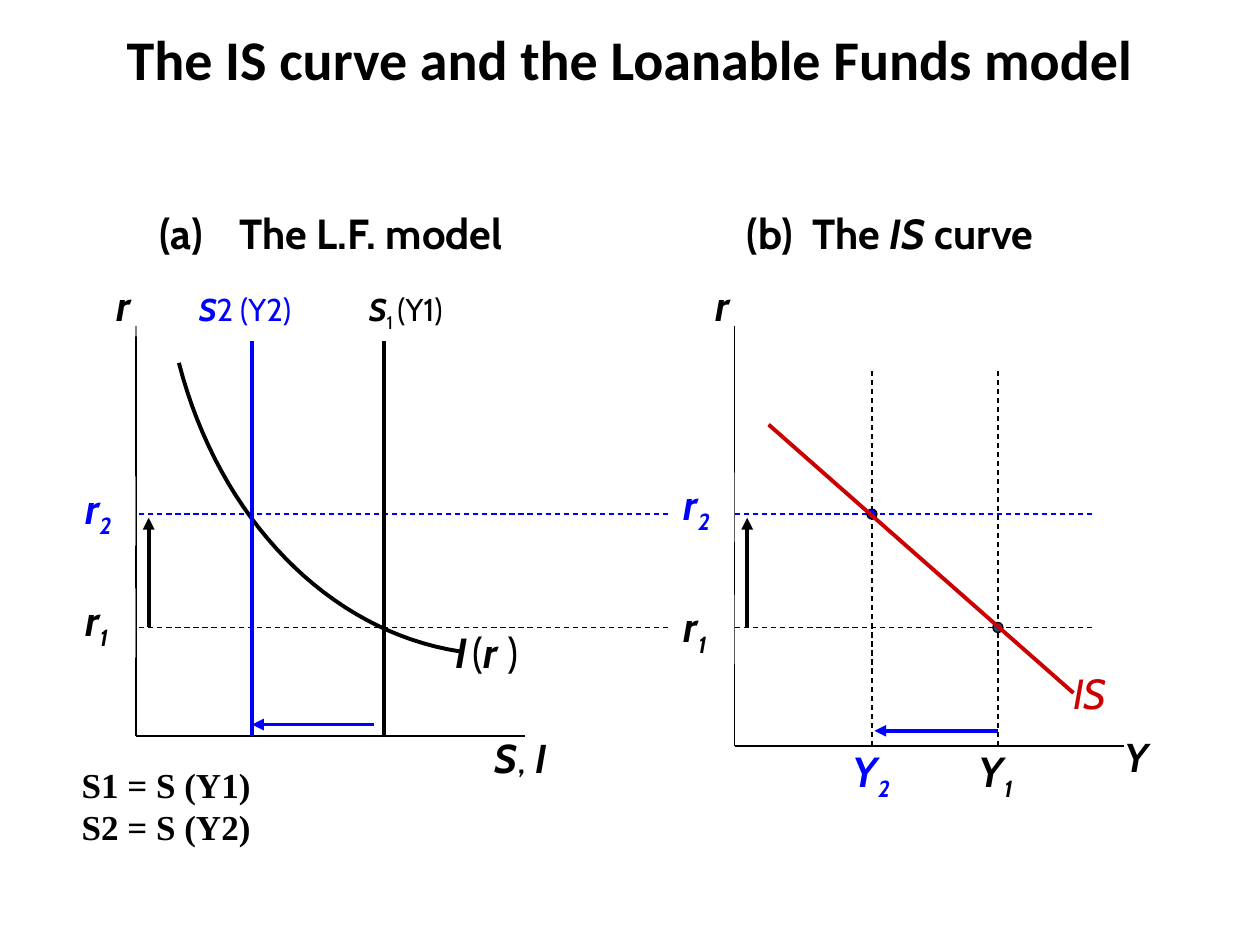
from typing import NamedTuple

from lxml.etree import SubElement
from pptx import Presentation
from pptx.dml.color import RGBColor as RGB
from pptx.enum.dml import MSO_LINE as Dash
from pptx.enum.shapes import MSO_CONNECTOR as Connector, MSO_SHAPE as Shape
from pptx.enum.text import MSO_ANCHOR as Anchor, MSO_AUTO_SIZE as AutoSize, PP_ALIGN as Align
from pptx.oxml.ns import qn
from pptx.util import Pt

PX = 9144  # EMU in one px, 100 px to the inch


class Theme:
    black, blue, red = RGB(0, 0, 0), RGB(0, 0, 255), RGB(204, 0, 0)
    white, navy = RGB(255, 255, 255), RGB(31, 73, 125)
    heading_font, label_font, note_font = "Calibri", "Cabin", "Times New Roman"
    heading, label, minor, note, tag, gap = 32, 24, 23, 20, 18, 12
    thin, axis, thick = 0.75, 1, 2.25


class Box(NamedTuple):
    x: int
    y: int
    w: int
    h: int

    def inner(self, dx, dy, w, h):
        return Box(self.x + dx, self.y + dy, w, h)


BOLD = {"bold": True}
ITALIC = {"italic": True}
SYMBOL = BOLD | ITALIC
MINOR = SYMBOL | {"size": Pt(Theme.minor)}
GAP = SYMBOL | {"size": Pt(Theme.gap)}
INDEX_INSETS = (10, 5, 10, 10)
RATE_INSETS = (10, 5, 0, 10)
R1, R2 = 498, 408  # heights of the two interest rates, shared by both diagrams


def emu(*lengths):
    return [round(length * PX) for length in lengths]


def write(paragraph, runs, color, font, size):
    """Add runs given as (text, font values[, baseline percent])."""
    for text, values, *baseline in runs:
        run = paragraph.add_run()
        run.text = text
        run.font.color.rgb = color
        for name, value in ({"name": font, "size": Pt(size)} | values).items():
            setattr(run.font, name, value)
        if baseline:
            run._r.get_or_add_rPr().set("baseline", str(baseline[0] * 1000))


def label(slide, box, *lines, color=Theme.black, font=Theme.label_font, size=Theme.label,
          insets=(10, 5, 10, 5), hanging=0, veil=0):
    """Place text; veil is the opacity in percent of a white ground."""
    holder = slide.shapes.add_textbox(*emu(*box))
    frame = holder.text_frame
    frame.word_wrap, frame.auto_size = True, AutoSize.SHAPE_TO_FIT_TEXT
    for side, inset in zip(("left", "top", "right", "bottom"), emu(*insets)):
        setattr(frame, f"margin_{side}", inset)
    for index, runs in enumerate(lines):
        paragraph = frame.add_paragraph() if index else frame.paragraphs[0]
        write(paragraph, runs, color, font, size)
        if hanging:
            properties = paragraph._p.get_or_add_pPr()
            properties.set("marL", str(hanging * PX))
            properties.set("indent", str(-hanging * PX))
    if veil:
        holder.fill.solid()
        holder.fill.fore_color.rgb = Theme.white
        if veil < 100:
            tint = holder._element.spPr.find(f".//{qn('a:srgbClr')}")
            SubElement(tint, qn("a:alpha"), val=str(veil * 1000))


def line(slide, start, end, color=Theme.black, width=Theme.thick, dashed=False, arrow=False):
    stroke = slide.shapes.add_connector(Connector.STRAIGHT, *emu(*start, *end))
    stroke.line.color.rgb, stroke.line.width = color, Pt(width)
    if dashed:
        stroke.line.dash_style = Dash.DASH
    if arrow:
        SubElement(stroke._element.spPr.find(qn("a:ln")), qn("a:tailEnd"), type="triangle")
    SubElement(stroke._element.spPr, qn("a:effectLst"))


def dot(slide, x, y, color):
    point = slide.shapes.add_shape(Shape.OVAL, *emu(x - 4, y - 4, 8, 8))
    point.shadow.inherit = False
    point.fill.solid()
    point.fill.fore_color.rgb = color
    point.line.color.rgb, point.line.width = Theme.black, Pt(Theme.thin)


def curve(slide, controls, steps=32):
    """Draw a cubic Bezier curve through its four control points."""
    weights = [((1 - t) ** 3, 3 * t * (1 - t) ** 2, 3 * t * t * (1 - t), t ** 3)
               for t in (step / steps for step in range(steps + 1))]
    points = [tuple(round(sum(w * c for w, c in zip(weight, axis)) * PX) for axis in zip(*controls))
              for weight in weights]
    builder = slide.shapes.build_freeform(*points[0])
    builder.add_line_segments(points[1:], close=False)
    outline = builder.convert_to_shape()
    outline.shadow.inherit = False
    outline.fill.background()
    outline.line.color.rgb, outline.line.width = Theme.black, Pt(Theme.thick)


def heading(slide, box):
    title = slide.shapes.title
    for side, value in zip(("left", "top", "width", "height"), emu(*box)):
        setattr(title, side, value)
    title.text_frame.vertical_anchor = Anchor.MIDDLE
    paragraph = title.text_frame.paragraphs[0]
    paragraph.alignment = Align.CENTER
    write(paragraph, [("The IS curve and the Loanable Funds model", BOLD)],
          Theme.black, Theme.heading_font, Theme.heading)


def rate_guides(slide, left, right):
    for rate, color in ((R1, Theme.black), (R2, Theme.blue)):
        line(slide, (right, rate), (left, rate), color, Theme.thin, dashed=True)


def rate_axes(slide, box, rate_tops, name_veil, rate_veil):
    """Draw both axes, the r labels and the arrow for the rise from r1 to r2."""
    corner = (box.x, box.y + box.h)
    line(slide, (box.x, box.y), corner, width=Theme.axis)
    line(slide, corner, (box.x + box.w, corner[1]), width=Theme.axis)
    label(slide, box.inner(-25, -42, 50, 50), [("r", SYMBOL)], veil=name_veil)
    for index, top, color in zip("12", rate_tops, (Theme.black, Theme.blue)):
        label(slide, box.inner(-50, top, 50, 55), [("r", SYMBOL), (index, MINOR, -25)],
              color=color, insets=RATE_INSETS, veil=rate_veil)
    line(slide, (box.x + 10, R1), (box.x + 10, R2 + 3), arrow=True)


def loanable_funds(slide, box):
    s2, s1, bottom = box.x + 92, box.x + 197, box.y + box.h
    label(slide, box.inner(9, -99, 392, 50), [("(a)\tThe L.F. model", BOLD)], hanging=63)
    rate_axes(slide, box, (208, 119), name_veil=50, rate_veil=50)
    label(slide, box.inner(275, 318, 100, 48),
          [("S", SYMBOL), (", ", {}), ("I", SYMBOL)], size=Theme.minor)
    curve(slide, [(box.x + dx, box.y + dy) for dx, dy in
                  ((257, 258), (153, 242), (66, 153), (34, 29))])
    label(slide, box.inner(244, 233, 165, 50), [("I", SYMBOL), (" ", GAP), ("(", {}),
                                                ("r", SYMBOL), (" ", SYMBOL), (")", {})])
    line(slide, (s1 - 8, bottom - 9), (s2, bottom - 9), Theme.blue, arrow=True)
    for x, color in ((s1, Theme.black), (s2, Theme.blue)):
        line(slide, (x, bottom), (x, box.y + 12), color)
    label(slide, box.inner(175, -34, 100, 40),
          [("S", SYMBOL), ("1 ", {}, -25), ("(Y1)", {})], size=Theme.tag)
    label(slide, box.inner(40, -34, 130, 40),
          [("S", SYMBOL), ("2 (Y2)", {})], color=Theme.blue, size=Theme.tag)
    label(slide, box.inner(-53, 342, 234, 77), [("S1 = S (Y1)", BOLD)], [("S2 = S (Y2)", BOLD)],
          font=Theme.note_font, size=Theme.note)


def is_curve(slide, box):
    y2, y1, bottom = box.x + 109, box.x + 209, box.y + box.h
    label(slide, box.inner(0, -99, 325, 50),
          [("(b)\tThe ", BOLD), ("IS", SYMBOL), (" curve", BOLD)], hanging=52)
    rate_axes(slide, box, (213, 116), name_veil=0, rate_veil=100)
    label(slide, box.inner(300, 317, 50, 48), [("Y", SYMBOL)], size=Theme.minor)
    for index, x, rate, color, fill in (("1", y1, R1, Theme.black, Theme.navy),
                                        ("2", y2, R2, Theme.blue, Theme.blue)):
        line(slide, (x, bottom), (x, bottom - 300), width=Theme.thin, dashed=True)
        label(slide, Box(x - 25, bottom - 5, 58, 55), [("Y", SYMBOL), (index, MINOR, -25)],
              color=color, insets=INDEX_INSETS)
        dot(slide, x, rate, fill)
    line(slide, (y1, bottom - 12), (y2 + 2, bottom - 12), Theme.blue, arrow=True)
    line(slide, (box.x + 27, box.y + 78), (box.x + 269, box.y + 291), Theme.red)
    label(slide, box.inner(259, 266, 67, 50), [("IS", ITALIC)], color=Theme.red)


def main():
    deck = Presentation()
    deck.slide_width, deck.slide_height = emu(1000, 750)
    slide = deck.slides.add_slide(deck.slide_layouts[5])
    heading(slide, Box(0, 0, 1000, 92))
    rate_guides(slide, 108, 867)
    loanable_funds(slide, Box(108, 259, 309, 325))
    is_curve(slide, Box(583, 259, 309, 333))
    deck.save("out.pptx")


if __name__ == "__main__":
    main()
